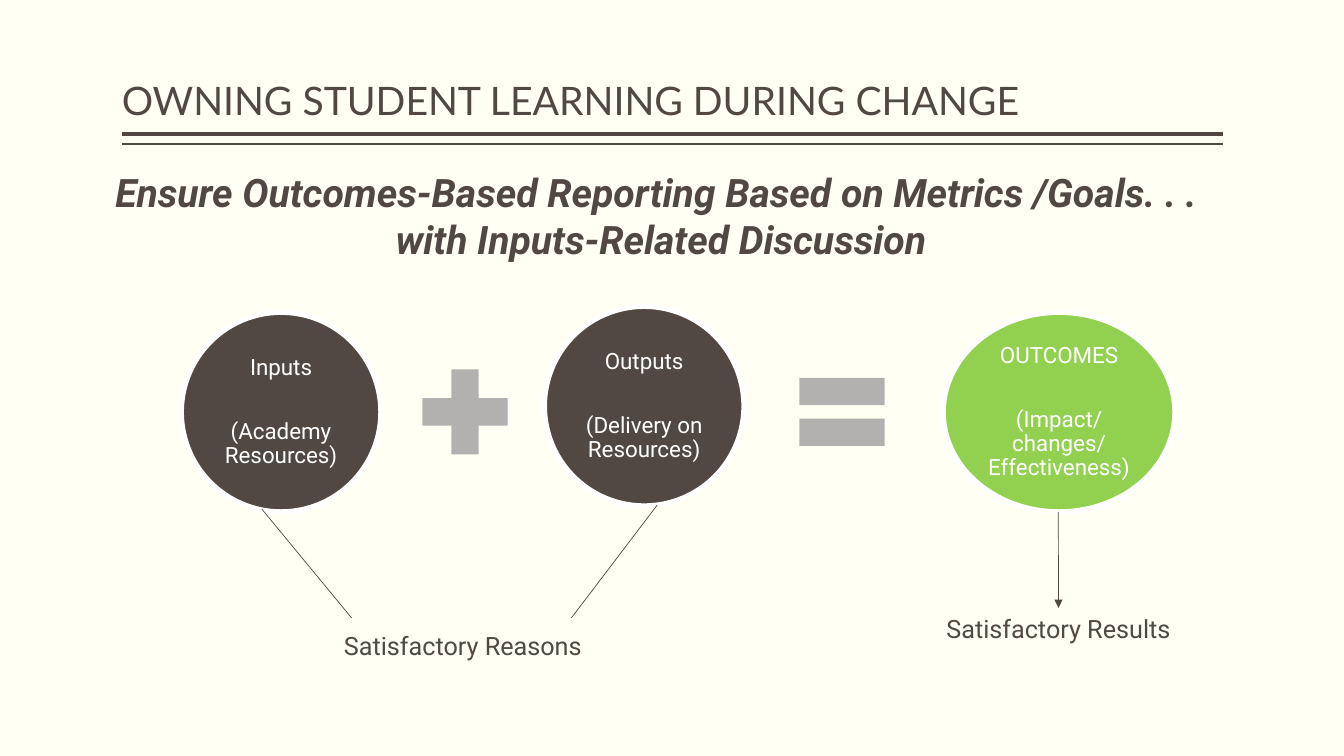
from dataclasses import dataclass

from lxml import etree
from pptx import Presentation
from pptx.dml.color import RGBColor
from pptx.enum import shapes, text
from pptx.oxml.ns import qn
from pptx.util import Cm, Pt


@dataclass(frozen=True)
class Theme:
    paper: str = "FFFFF3"
    brown: str = "514843"
    green: str = "92D050"
    grey: str = "B3B1B0"
    white: str = "FFFFFF"
    heading_font: str = "Lato"
    body_font: str = "Roboto"
    heading_size: float = 28
    label_size: float = 18
    circle_size: float = 16


@dataclass(frozen=True)
class Box:
    left: float
    top: float
    width: float
    height: float

    def lengths(self) -> tuple:
        return Cm(self.left), Cm(self.top), Cm(self.width), Cm(self.height)


@dataclass(frozen=True)
class Style:
    size: float
    color: str
    font: str = "Roboto"
    bold: bool = False
    italic: bool = False
    align: text.PP_ALIGN = text.PP_ALIGN.CENTER
    line_spacing: float = 1.0
    gap: float = 0


@dataclass(frozen=True)
class TextItem:
    box: Box
    lines: tuple
    style: Style
    anchor: text.MSO_ANCHOR = text.MSO_ANCHOR.TOP
    side_inset: float = 0


@dataclass(frozen=True)
class Circle:
    box: Box
    fill: str
    lines: tuple


@dataclass(frozen=True)
class Operator:
    kind: shapes.MSO_SHAPE
    left: float


@dataclass(frozen=True)
class Line:
    start: tuple
    end: tuple
    weight: float


T = Theme()
TITLE_STYLE = Style(T.heading_size, T.brown, T.heading_font,
                    align=text.PP_ALIGN.LEFT, line_spacing=0.9)
SUBTITLE_STYLE = Style(T.heading_size, T.brown, bold=True, italic=True)
LABEL_STYLE = Style(T.label_size, T.brown)
CIRCLE_STYLE = Style(T.circle_size, T.white, line_spacing=0.9, gap=28.3)

RULE_LEFT, RULE_RIGHT = 3.07, 30.81
DIAMETER = 5.03
OPERATOR_TOP, OPERATOR_SIZE = 8.92, 2.92

HEADINGS = (
    TextItem(Box(RULE_LEFT, 0.2, RULE_RIGHT - RULE_LEFT, 3.05),
             ("OWNING STUDENT LEARNING DURING CHANGE",),
             TITLE_STYLE, text.MSO_ANCHOR.BOTTOM),
    TextItem(Box(1.96, 4.11, 29.39, 1.88),
             ("Ensure Outcomes-Based Reporting Based on Metrics /Goals. . . ",
              "with Inputs-Related Discussion"), SUBTITLE_STYLE),
)
CIRCLES = (
    Circle(Box(4.57, 7.87, DIAMETER, DIAMETER), T.brown,
           ("Inputs", "(Academy Resources)")),
    Circle(Box(13.72, 7.72, DIAMETER, DIAMETER), T.brown,
           ("Outputs", "(Delivery on Resources)")),
    Circle(Box(23.77, 7.87, 5.84, DIAMETER), T.green,
           ("OUTCOMES", "(Impact/changes/Effectiveness)")),
)
OPERATORS = (
    Operator(shapes.MSO_SHAPE.MATH_PLUS, 10.26),
    Operator(shapes.MSO_SHAPE.MATH_EQUAL, 19.76),
)
REASONS = TextItem(Box(7.37, 15.77, 8.59, 1.02), ("Satisfactory Reasons",),
                   LABEL_STYLE, side_inset=0.25)
RESULTS = TextItem(Box(22.38, 15.32, 8.59, 1.02), ("Satisfactory Results",),
                   LABEL_STYLE, side_inset=0.25)
LINES = (
    Line((RULE_RIGHT, 3.38), (RULE_LEFT, 3.38), 3),
    Line((RULE_RIGHT, 3.63), (RULE_LEFT, 3.63), 1),
    Line((6.6, 12.83), (8.86, 15.57), 0.5),
    Line((16.56, 12.73), (14.4, 15.57), 0.5),
)
RESULT_ARROW = Line((26.67, 12.9), (26.67, 15.32), 0.5)


def rgb(color: str) -> RGBColor:
    return RGBColor.from_string(color)


def write(tf, lines: tuple, style: Style) -> None:
    tf.word_wrap = True
    for i, line in enumerate(lines):
        p = tf.paragraphs[0] if i == 0 else tf.add_paragraph()
        p.alignment = style.align
        p.line_spacing = style.line_spacing
        p.space_before = Pt(style.gap if i else 0)
        r = p.add_run()
        r.text = line
        r.font.name = style.font
        r.font.size = Pt(style.size)
        r.font.bold = style.bold
        r.font.italic = style.italic
        r.font.color.rgb = rgb(style.color)


def add_text(s, item: TextItem):
    sp = s.shapes.add_textbox(*item.box.lengths())
    tf = sp.text_frame
    tf.vertical_anchor = item.anchor
    tf.margin_left = tf.margin_right = Cm(item.side_inset)
    write(tf, item.lines, item.style)
    return sp


def add_filled(s, kind: shapes.MSO_SHAPE, box: Box, fill: str):
    sp = s.shapes.add_shape(kind, *box.lengths())
    sp.shadow.inherit = False
    sp.fill.solid()
    sp.fill.fore_color.rgb = rgb(fill)
    sp.line.fill.background()
    return sp


def add_circle(s, circle: Circle) -> None:
    sp = add_filled(s, shapes.MSO_SHAPE.OVAL, circle.box, circle.fill)
    sp.line.color.rgb = rgb(T.white)
    sp.line.width = Pt(3.78)
    tf = sp.text_frame
    tf.vertical_anchor = text.MSO_ANCHOR.MIDDLE
    tf.margin_left = tf.margin_right = tf.margin_top = tf.margin_bottom = Cm(0.05)
    write(tf, circle.lines, CIRCLE_STYLE)


def add_line(s, line: Line):
    ends = [Cm(v) for v in line.start + line.end]
    cxn = s.shapes.add_connector(shapes.MSO_CONNECTOR.STRAIGHT, *ends)
    cxn.line.color.rgb = rgb(T.brown)
    cxn.line.width = Pt(line.weight)
    etree.SubElement(cxn._element.spPr, qn("a:effectLst"))
    return cxn


def main() -> None:
    prs = Presentation()
    prs.slide_width, prs.slide_height = Cm(33.87), Cm(19.05)
    s = prs.slides.add_slide(prs.slide_layouts[6])
    s.background.fill.solid()
    s.background.fill.fore_color.rgb = rgb(T.paper)

    for heading in HEADINGS:
        add_text(s, heading)
    for circle in CIRCLES:
        add_circle(s, circle)
    for op in OPERATORS:
        box = Box(op.left, OPERATOR_TOP, OPERATOR_SIZE, OPERATOR_SIZE)
        add_filled(s, op.kind, box, T.grey)
    for line in LINES:
        add_line(s, line)
    add_text(s, REASONS)
    results = add_text(s, RESULTS)
    arrow = add_line(s, RESULT_ARROW)
    arrow.end_connect(results, 0)
    etree.SubElement(arrow.line._get_or_add_ln(), qn("a:tailEnd"), type="triangle")
    prs.save("out.pptx")


if __name__ == "__main__":
    main()
